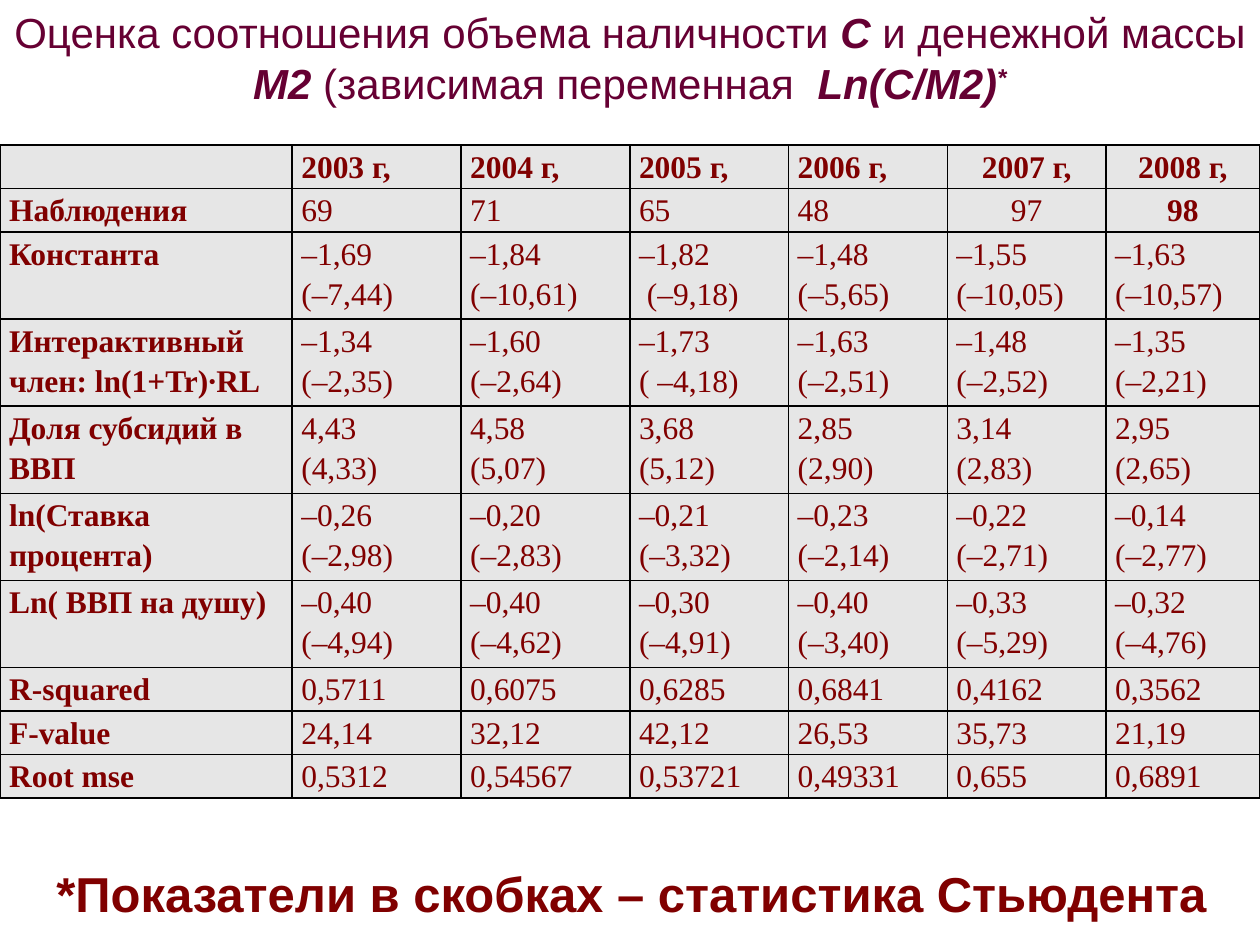
from lxml.etree import SubElement
from pptx import Presentation
from pptx.dml.color import RGBColor
from pptx.enum.text import MSO_ANCHOR, MSO_AUTO_SIZE, PP_ALIGN
from pptx.oxml.ns import qn
from pptx.util import Pt

SLIDE_WIDTH, SLIDE_HEIGHT = 720, 540
SHORT_ROW, TALL_ROW = 24.9, 49.8
COLUMN_WIDTHS = [167, 96.5, 96.5, 90.7, 90.7, 90.7, 87.9]

# Title pieces: text, emphasised, superscript
TITLE = [
    ("Оценка соотношения объема наличности ", False, False),
    ("С", True, False),
    (" и денежной массы ", False, False),
    ("M2 ", True, False),
    ("(зависимая переменная  ", False, False),
    ("Ln(C/M2)", True, False),
    ("*", True, True),
]
FOOTNOTE = "*Показатели в скобках – статистика Стьюдента"

# Estimates, with the t-statistic on a second line
REGRESSION = [
    ["", "2003 г,", "2004 г,", "2005 г,", "2006 г,", "2007 г,", "2008 г,"],
    ["Наблюдения", "69", "71", "65", "48", "97", "98"],
    ["Константа", "–1,69\n(–7,44)", "–1,84\n(–10,61)", "–1,82\n (–9,18)",
     "–1,48\n(–5,65)", "–1,55\n(–10,05)", "–1,63\n(–10,57)"],
    ["Интерактивный член: ln(1+Tr)∙RL", "–1,34\n(–2,35)", "–1,60\n(–2,64)",
     "–1,73\n( –4,18)", "–1,63\n(–2,51)", "–1,48\n(–2,52)", "–1,35\n(–2,21)"],
    ["Доля субсидий в ВВП", "4,43\n(4,33)", "4,58\n(5,07)", "3,68\n(5,12)",
     "2,85\n(2,90)", "3,14\n(2,83)", "2,95\n(2,65)"],
    ["ln(Ставка процента)", "–0,26\n(–2,98)", "–0,20\n(–2,83)", "–0,21\n(–3,32)",
     "–0,23\n(–2,14)", "–0,22\n(–2,71)", "–0,14\n(–2,77)"],
    ["Ln( ВВП на душу)", "–0,40\n(–4,94)", "–0,40\n(–4,62)", "–0,30\n(–4,91)",
     "–0,40\n(–3,40)", "–0,33\n(–5,29)", "–0,32\n(–4,76)"],
    ["R-squared", "0,5711", "0,6075", "0,6285", "0,6841", "0,4162", "0,3562"],
    ["F-value", "24,14", "32,12", "42,12", "26,53", "35,73", "21,19"],
    ["Root mse", "0,5312", "0,54567", "0,53721", "0,49331", "0,655", "0,6891"],
]


def color(hex_string):
    return RGBColor.from_string(hex_string)


class SlideBuilder:
    heading_font, table_font = "Arial", "Times New Roman"
    plum, maroon, grey, black = "660033", "800000", "E6E6E6", "000000"

    def __init__(self, slide):
        self.slide = slide

    def format_font(self, font, name, size, hex_string, bold=False, italic=False):
        font.name, font.size = name, Pt(size)
        font.bold, font.italic = bold, italic
        font.color.rgb = color(hex_string)

    def title(self, pieces, left, top, width, height):
        heading = self.slide.shapes.title
        heading.left, heading.top = Pt(left), Pt(top)
        heading.width, heading.height = Pt(width), Pt(height)
        frame = heading.text_frame
        frame.word_wrap = True
        frame.auto_size = MSO_AUTO_SIZE.SHAPE_TO_FIT_TEXT
        frame.vertical_anchor = MSO_ANCHOR.MIDDLE
        line = frame.paragraphs[0]
        line.alignment = PP_ALIGN.CENTER
        line.line_spacing = 1.0
        for text, emphasised, superscript in pieces:
            run = line.add_run()
            run.text = text
            self.format_font(run.font, self.heading_font, 24, self.plum,
                             emphasised, emphasised)
            if superscript:
                run._r.get_or_add_rPr().set("baseline", "30000")

    def footnote(self, text, left, top, width, height):
        note = self.slide.shapes.add_textbox(Pt(left), Pt(top), Pt(width), Pt(height))
        frame = note.text_frame
        frame.text = text
        frame.word_wrap = False
        frame.auto_size = MSO_AUTO_SIZE.SHAPE_TO_FIT_TEXT
        self.format_font(frame.paragraphs[0].runs[0].font, self.heading_font, 28,
                         self.maroon, bold=True)

    def borders(self, cell):
        properties = cell._tc.get_or_add_tcPr()
        for side in ("a:lnL", "a:lnR", "a:lnT", "a:lnB"):
            edge = SubElement(properties, qn(side), w=str(Pt(1)))
            fill = SubElement(edge, qn("a:solidFill"))
            SubElement(fill, qn("a:srgbClr"), val=self.black)

    def cell(self, cell, text, bold, alignment):
        self.borders(cell)
        cell.fill.solid()
        cell.fill.fore_color.rgb = color(self.grey)
        cell.margin_left = cell.margin_right = Pt(5.2)
        cell.margin_top = cell.margin_bottom = 0
        cell.text_frame.text = text
        for line in cell.text_frame.paragraphs:
            line.alignment = alignment
            line.line_spacing = 1.15
            for run in line.runs:
                self.format_font(run.font, self.table_font, 18, self.maroon, bold)

    def table(self, rows, left, top, widths):
        # Rows with a t-statistic are twice as tall
        heights = [TALL_ROW if "\n" in row[1] else SHORT_ROW for row in rows]
        table = self.slide.shapes.add_table(
            len(rows), len(widths), Pt(left), Pt(top),
            Pt(sum(widths)), Pt(sum(heights))).table
        table.first_row = table.horz_banding = False
        for column, width in zip(table.columns, widths):
            column.width = Pt(width)
        for r, (row, height) in enumerate(zip(rows, heights)):
            table.rows[r].height = Pt(height)
            for c, text in enumerate(row):
                bold = r == 0 or c == 0 or (r, c) == (1, 6)
                centred = r < 2 and c > 4
                self.cell(table.cell(r, c), text, bold,
                          PP_ALIGN.CENTER if centred else PP_ALIGN.LEFT)


def main():
    presentation = Presentation()
    presentation.slide_width = Pt(SLIDE_WIDTH)
    presentation.slide_height = Pt(SLIDE_HEIGHT)
    title_only = presentation.slide_layouts[5]
    builder = SlideBuilder(presentation.slides.add_slide(title_only))

    # Title, regression table, footnote
    builder.title(TITLE, 0, 0, SLIDE_WIDTH, 65.4)
    builder.table(REGRESSION, 0, 82.8, COLUMN_WIDTHS)
    builder.footnote(FOOTNOTE, 25.2, 489.6, 679.7, 41.2)

    presentation.save("out.pptx")


if __name__ == "__main__":
    main()
